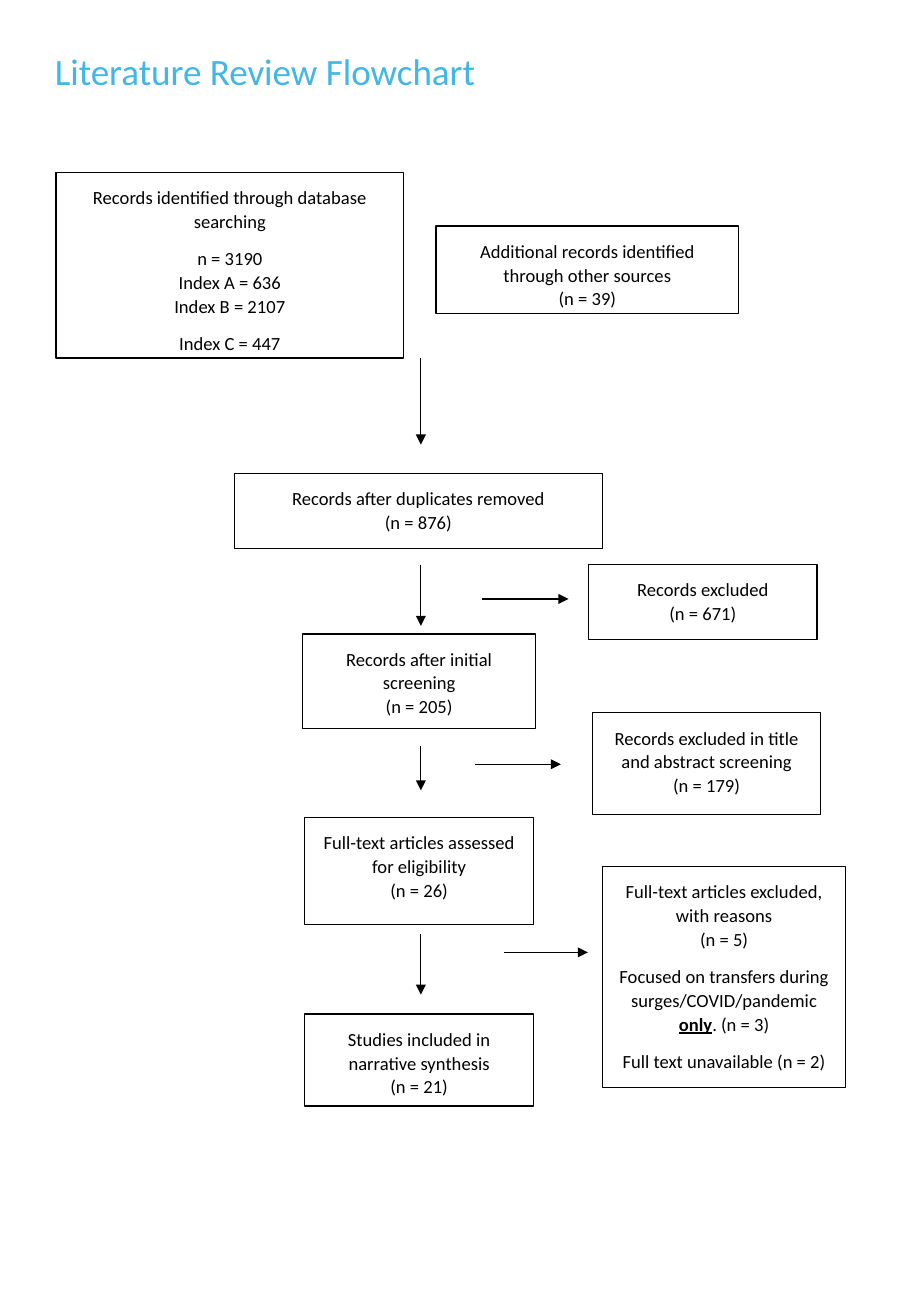
from lxml.etree import SubElement
from pptx import Presentation
from pptx.dml.color import RGBColor
from pptx.enum.shapes import MSO_CONNECTOR as CONN, MSO_SHAPE as SHAPE
from pptx.enum.text import MSO_ANCHOR as ANCHOR, PP_ALIGN as ALIGN
from pptx.oxml.ns import qn
from pptx.util import Pt

TITLE = "Literature Review Flowchart"
FONT, BLACK, WHITE, BLUE = "Calibri", "000000", "FFFFFF", "42B6E6"
EMPHASIS = "*"

BOXES = [
    ((33.25, 102.25, 206, 110), ["Records identified through database searching",
                                 "n = 3190\nIndex A = 636\nIndex B = 2107",
                                 "Index C = 447"]),
    ((258.5, 134, 179.5, 52), ["Additional records identified through other sources\n(n = 39)"]),
    ((139, 280.75, 218, 44.5), ["Records after duplicates removed\n(n = 876)"]),
    ((179.5, 375.75, 138, 56), ["Records after initial screening\n(n = 205)"]),
    ((349, 334.75, 135.25, 44.5), ["Records excluded\n(n = 671)"]),
    ((180.75, 484.5, 135.5, 63.5), ["Full-text articles assessed for eligibility\n(n = 26)"]),
    ((351.25, 422.5, 135.25, 60.5), ["Records excluded in title and abstract screening\n(n = 179)"]),
    ((357.25, 513.5, 144, 131), ["Full-text articles excluded, with reasons\n(n = 5)",
                                 "Focused on transfers during surges/COVID/pandemic *only*. (n = 3)",
                                 "Full text unavailable (n = 2)"]),
    ((180.75, 601, 135.5, 54.5), ["Studies included in narrative synthesis\n(n = 21)"]),
]
SPINE_X = 249.5
DOWN = [(212.5, 263.5), (335, 371), (442, 468.5), (553.5, 589.5)]
ACROSS = [(286, 337, 355), (281.5, 332.5, 453), (299, 348.5, 564.5)]


def color(code):
    return RGBColor.from_string(code)


def style_line(line):
    line.color.rgb = color(BLACK)
    line.width = Pt(0.75)


def style_font(font, size, code):
    font.name, font.size = FONT, Pt(size)
    font.color.rgb = color(code)


def add_box(s, place, texts):
    sp = s.shapes.add_shape(SHAPE.RECTANGLE, *map(Pt, place))
    sp.shadow.inherit = False
    sp.fill.solid()
    sp.fill.fore_color.rgb = color(WHITE)
    style_line(sp.line)
    tf = sp.text_frame
    tf.word_wrap, tf.vertical_anchor = True, ANCHOR.TOP
    tf.margin_left = tf.margin_right = tf.margin_top = tf.margin_bottom = Pt(7.2)
    for i, text in enumerate(texts):
        p = tf.add_paragraph() if i else tf.paragraphs[0]
        p.text, *rest = text.split(EMPHASIS)
        for j, piece in enumerate(rest):
            r = p.add_run()
            r.text = piece
            if j % 2 == 0:
                r.font.bold = r.font.underline = True
        p.alignment, p.line_spacing, p.space_after = ALIGN.CENTER, 1.07, Pt(8)
        style_font(p.font, 11, BLACK)


def add_arrow(s, x1, y1, x2, y2):
    c = s.shapes.add_connector(CONN.STRAIGHT, *map(Pt, (x1, y1, x2, y2)))
    style_line(c.line)
    SubElement(c.get_or_add_ln(), qn("a:tailEnd"), type="triangle")
    SubElement(c.element.spPr, qn("a:effectLst"))


def main():
    prs = Presentation()
    prs.slide_width, prs.slide_height = Pt(540), Pt(780)
    s = prs.slides.add_slide(prs.slide_layouts[5])

    title = s.shapes.title
    title.left, title.top, title.width, title.height = map(Pt, (25.25, 28, 490, 37.5))
    tf = title.text_frame
    tf.text, tf.vertical_anchor = TITLE, ANCHOR.TOP
    p = tf.paragraphs[0]
    p.alignment, p.line_spacing = ALIGN.LEFT, 0.9
    style_font(p.font, 22, BLUE)

    for place, texts in BOXES:
        add_box(s, place, texts)
    for top, bottom in DOWN:
        add_arrow(s, SPINE_X, top, SPINE_X, bottom)
    for left, right, y in ACROSS:
        add_arrow(s, left, y, right, y)
    prs.save("out.pptx")


if __name__ == "__main__":
    main()
